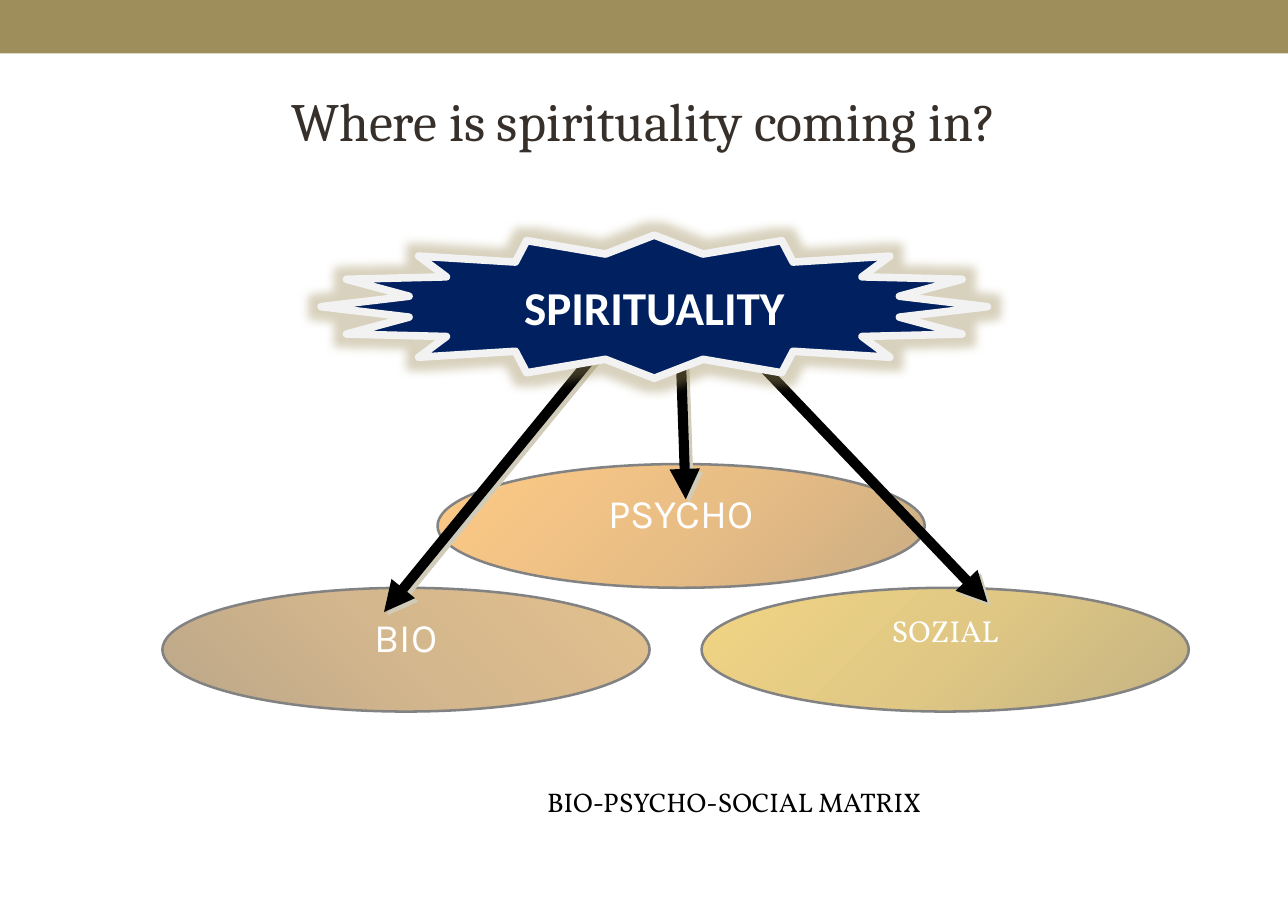
from copy import deepcopy

from lxml import etree
from pptx import Presentation
from pptx.dml.color import RGBColor
from pptx.enum.shapes import MSO_CONNECTOR, MSO_SHAPE
from pptx.enum.text import MSO_ANCHOR, PP_ALIGN
from pptx.oxml import parse_xml
from pptx.oxml.ns import nsdecls, qn
from pptx.util import Pt

STRAIGHT = MSO_CONNECTOR.STRAIGHT
RECT, ELLIPSE = MSO_SHAPE.RECTANGLE, MSO_SHAPE.OVAL
VEIL, STAR = MSO_SHAPE.ROUNDED_RECTANGLE, MSO_SHAPE.STAR_16_POINT
TOP, MIDDLE = MSO_ANCHOR.TOP, MSO_ANCHOR.MIDDLE
CENTER = PP_ALIGN.CENTER

# Content
SLIDE_W, SLIDE_H = 765.36, 540
COLORS = {"band": "9E8E5C", "title": "37302A", "star": "002060",
          "star_edge": "F2F2F2", "shadow": "D0CCB9",
          "white": "FFFFFF", "black": "000000"}
TITLE = "Where is spirituality coming in?"
STAR_TEXT = "SPIRITUALITY"
CAPTION = "BIO-PSYCHO-SOCIAL MATRIX"
ELLIPSE_W, ELLIPSE_H = 289.5, 73.5
LOWER_TOP = 349.2
# text, left, top, font, size, gradient colours, gradient angle
ELLIPSES = [
    ("BIO", 96.5, LOWER_TOP, "Karla", 24,
     ("764C10", "A86D17", "C7811B"), 45),
    ("SOZIAL", 416.9, LOWER_TOP, "Vollkorn", 18,
     ("876503", "C18F05", "E5AA05"), 135),
    ("PSYCHO", 260, LOWER_TOP - ELLIPSE_H, "Karla", 24,
     ("955705", "D47C07", "FC9308"), 135),
]
# from x, from y, to x, to y
ARROWS = [(448.6, 213, 586.8, 357.8),
          (360, 202.3, 228.2, 363.6),
          (404.6, 213, 407.5, 296.6)]


def rgb(name):
    return RGBColor.from_string(COLORS[name])


def add_shape(kind, left, top, width, height, fill=None, line=None, line_w=0):
    sp = slide.shapes.add_shape(kind, Pt(left), Pt(top), Pt(width), Pt(height))
    sp.shadow.inherit = False
    if fill:
        sp.fill.solid()
        sp.fill.fore_color.rgb = rgb(fill)
    if line:
        sp.line.color.rgb = rgb(line)
        sp.line.width = Pt(line_w)
    else:
        sp.line.fill.background()
    return sp


def set_text(sp, text, font, size, color, anchor=MIDDLE, bold=False):
    tf = sp.text_frame
    tf.word_wrap = True
    tf.vertical_anchor = anchor
    p = tf.paragraphs[0]
    p.text = text
    p.alignment = CENTER
    p.font.name, p.font.size, p.font.bold = font, Pt(size), bold
    p.font.color.rgb = rgb(color)


def set_gradient(sp, colors, angle):
    fill = sp.fill
    fill.gradient()
    fill.gradient_angle = angle
    stops = sp.element.spPr.find(".//" + qn("a:gsLst"))
    stops.insert(1, deepcopy(stops[0]))
    for i, (stop, color) in enumerate(zip(fill.gradient_stops, colors)):
        stop.color.rgb = RGBColor.from_string(color)
        stop.position = i / 2


def add_effect(sp, xml):
    spPr = sp.element.spPr
    for old in spPr.findall(qn("a:effectLst")):
        spPr.remove(old)
    spPr.append(parse_xml(f'<a:effectLst {nsdecls("a")}>{xml}</a:effectLst>'))


prs = Presentation()
prs.slide_width, prs.slide_height = Pt(SLIDE_W), Pt(SLIDE_H)
slide = prs.slides.add_slide(prs.slide_layouts[5])

# Top band and title
band = add_shape(RECT, 0, 0, SLIDE_W, 31.7, "band")
title = slide.shapes.title
title.left, title.top, title.width, title.height = Pt(38.2), Pt(26), Pt(689), Pt(90.7)
set_text(title, TITLE, "Cambria", 32, "title")

# Matrix ellipses under a translucent veil
for text, left, top, font, size, colors, angle in ELLIPSES:
    sp = add_shape(ELLIPSE, left, top, ELLIPSE_W, ELLIPSE_H, line="black", line_w=1.5)
    set_gradient(sp, colors, angle)
    set_text(sp, text, font, size, "white", TOP)
veil = add_shape(VEIL, 65.5, 247.7, 657.4, 193, "white")
veil_color = veil.element.spPr.find(".//" + qn("a:srgbClr"))
etree.SubElement(veil_color, qn("a:alpha"), val="51000")

# Arrows
for ends in ARROWS:
    arrow = slide.shapes.add_connector(STRAIGHT, *map(Pt, ends))
    arrow.line.color.rgb = rgb("black")
    arrow.line.width = Pt(6)
    etree.SubElement(arrow.line._get_or_add_ln(), qn("a:tailEnd"), type="triangle")
    add_effect(arrow, f'<a:outerShdw dist="{Pt(2.8)}" dir="2700000" algn="ctr" '
                      f'rotWithShape="0"><a:srgbClr val="{COLORS["shadow"]}"/>'
                      '</a:outerShdw>')

# Glowing star
star = add_shape(STAR, 190.8, 139.7, 396, 85, "star", "star_edge", 4.5)
set_text(star, STAR_TEXT, "Calibri", 28, "white", bold=True)
add_effect(star, f'<a:glow rad="{Pt(11)}"><a:srgbClr val="{COLORS["band"]}">'
                 '<a:alpha val="40000"/></a:srgbClr></a:glow>')

# Caption
caption = slide.shapes.add_textbox(Pt(209.5), Pt(463), Pt(453.6), Pt(26.6))
set_text(caption, CAPTION, "Vollkorn", 16, "black", TOP)

prs.save("out.pptx")
